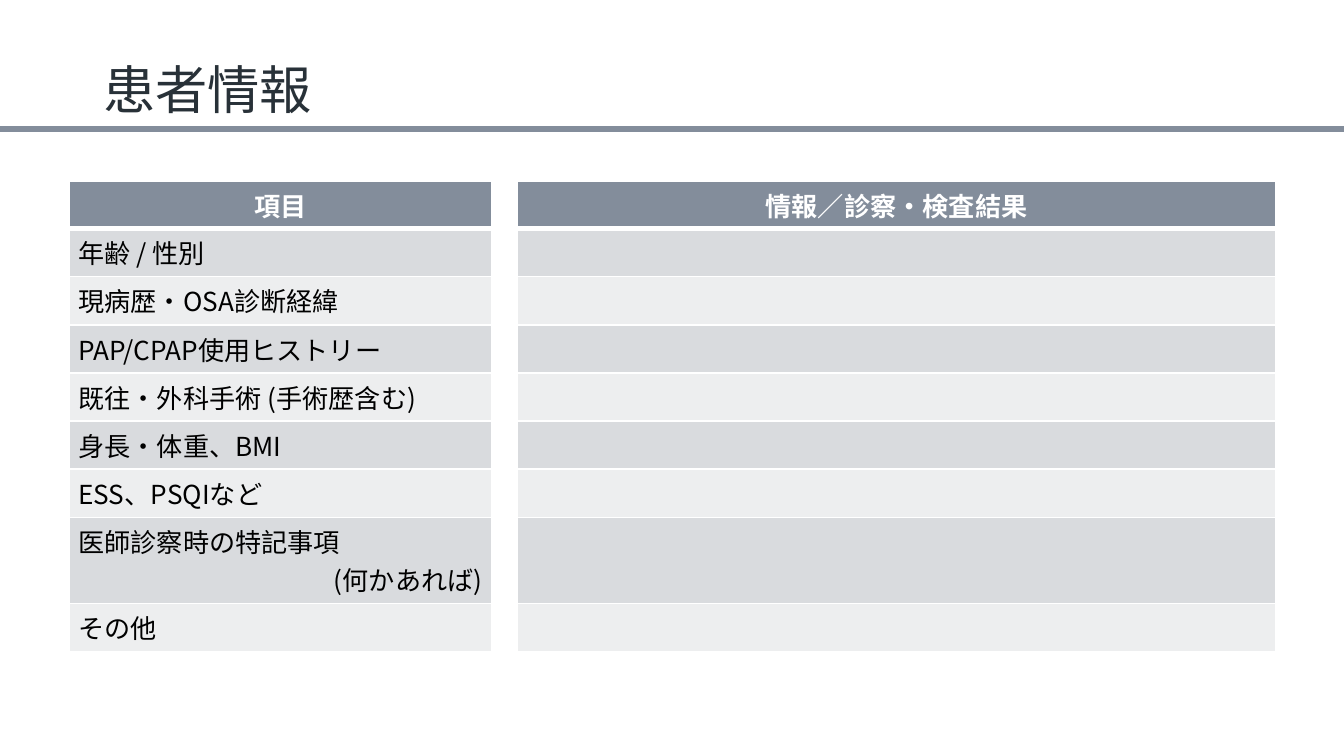
"""Build the patient information slide: a title, a rule and a two-column form."""
from dataclasses import dataclass

from lxml import etree
from pptx import Presentation, util as u
from pptx.dml.color import RGBColor
from pptx.enum import shapes, text
from pptx.oxml import ns

LEFT, CENTER, RIGHT = text.PP_ALIGN.LEFT, text.PP_ALIGN.CENTER, text.PP_ALIGN.RIGHT


@dataclass(frozen=True)
class Theme:
    font: str = "Noto Sans CJK JP"
    title: str = "283138"
    accent: str = "838D9B"
    bands: tuple[str, str] = ("D9DBDE", "EDEEEF")
    light: str = "FFFFFF"
    body: str = "000000"
    title_size: int = 28
    body_size: int = 14


@dataclass(frozen=True)
class Row:
    label: str
    height: float = 0.91
    note: str = ""


THEME = Theme()
HEADINGS = ("項目", "", "情報／診察・検査結果")
COLUMN_WIDTHS = (8.0, 0.48, 14.33)
HEADER_HEIGHT = 0.89
ROWS = (
    Row("年齢 / 性別"),
    Row("現病歴・OSA診断経緯"),
    Row("PAP/CPAP使用ヒストリー"),
    Row("既往・外科手術 (手術歴含む)"),
    Row("身長・体重、BMI"),
    Row("ESS、PSQIなど"),
    Row("医師診察時の特記事項", 1.63, "(何かあれば)"),
    Row("その他"),
)


def write(p, words: str, size: int, color: str, bold: bool = False, align=LEFT) -> None:
    """Fill one paragraph and set its font for Latin and Japanese text."""
    p.alignment = align
    f = p.font
    f.size, f.bold, f.name = u.Pt(size), bold, THEME.font
    f.color.rgb = RGBColor.from_string(color)
    etree.SubElement(f._rPr, ns.qn("a:ea"), typeface=THEME.font)
    if words:
        p.add_run().text = words
    else:
        p._p.get_or_add_endParaRPr().set("sz", str(size * 100))


def border(cell, side: str, width: float) -> None:
    """Draw one light border of a cell."""
    ln = etree.SubElement(cell._tc.get_or_add_tcPr(), ns.qn(f"a:ln{side}"), w=str(u.Pt(width)))
    fill = etree.SubElement(ln, ns.qn("a:solidFill"))
    etree.SubElement(fill, ns.qn("a:srgbClr"), val=THEME.light)


def style_cell(cell, fill: str | None, top: float, bottom: float) -> None:
    """Set the margins, borders and fill of a cell."""
    cell.margin_left = cell.margin_right = u.Cm(0.18)
    cell.margin_top = cell.margin_bottom = u.Cm(0.09)
    for side, width in (("L", 1), ("R", 1), ("T", top), ("B", bottom)):
        border(cell, side, width)
    if fill:
        cell.fill.solid()
        cell.fill.fore_color.rgb = RGBColor.from_string(fill)
    else:
        cell.fill.background()


def add_title(s, words: str) -> None:
    """Add the slide title."""
    tf = s.shapes.add_textbox(u.Cm(1.7), u.Cm(0.3), u.Cm(22.81), u.Cm(2.77)).text_frame
    tf.word_wrap = True
    tf.vertical_anchor = text.MSO_ANCHOR.MIDDLE
    write(tf.paragraphs[0], words, THEME.title_size, THEME.title)


def add_rule(s, y: float, width: int) -> None:
    """Add the full-width rule below the title."""
    ln = s.shapes.add_connector(shapes.MSO_CONNECTOR.STRAIGHT, 0, u.Cm(y), width, u.Cm(y))
    ln.line.width = u.Pt(3)
    ln.line.color.rgb = RGBColor.from_string(THEME.accent)
    etree.SubElement(ln._element.spPr, ns.qn("a:effectLst"))


def add_form(s) -> None:
    """Add the form with its header and banded rows."""
    heights = (HEADER_HEIGHT, *(row.height for row in ROWS))
    tbl = s.shapes.add_table(
        len(heights), len(COLUMN_WIDTHS), u.Cm(1.3), u.Cm(3.43),
        u.Cm(sum(COLUMN_WIDTHS)), u.Cm(sum(heights)),
    ).table
    for column, width in zip(tbl.columns, COLUMN_WIDTHS):
        column.width = u.Cm(width)
    for table_row, height in zip(tbl.rows, heights):
        table_row.height = u.Cm(height)

    for j, heading in enumerate(HEADINGS):
        cell = tbl.cell(0, j)
        style_cell(cell, THEME.accent if heading else None, 1, 3)
        write(cell.text_frame.paragraphs[0], heading, THEME.body_size, THEME.light, True, CENTER)

    for i, row in enumerate(ROWS):
        for j, heading in enumerate(HEADINGS):
            cell = tbl.cell(i + 1, j)
            style_cell(cell, THEME.bands[i % 2] if heading else None, 1 if i else 3, 1)
            label = row.label if j == 0 else ""
            write(cell.text_frame.paragraphs[0], label, THEME.body_size, THEME.body)
        if row.note:
            p = tbl.cell(i + 1, 0).text_frame.add_paragraph()
            write(p, row.note, THEME.body_size, THEME.body, align=RIGHT)


def main() -> None:
    """Build and save the slide."""
    prs = Presentation()
    prs.slide_width, prs.slide_height = u.Cm(25.4), u.Cm(14.29)
    s = prs.slides.add_slide(prs.slide_layouts[6])
    add_title(s, "患者情報")
    add_form(s)
    add_rule(s, 2.44, prs.slide_width)
    prs.save("out.pptx")


if __name__ == "__main__":
    main()
